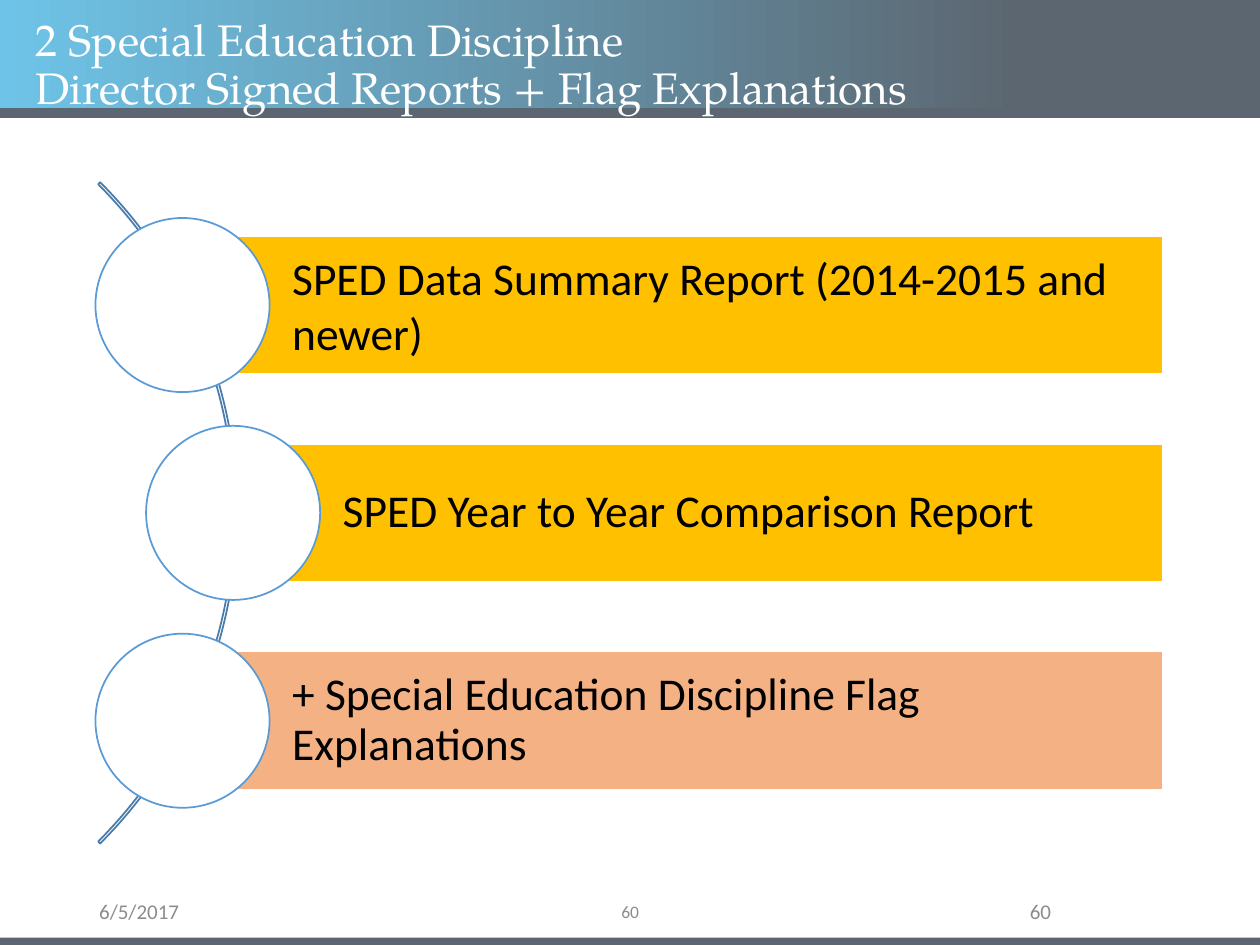
from dataclasses import dataclass

from pptx import Presentation
from pptx.dml.color import RGBColor
from pptx.enum.shapes import MSO_SHAPE
from pptx.enum.text import MSO_ANCHOR, MSO_AUTO_SIZE, PP_ALIGN
from pptx.shapes.autoshape import Shape
from pptx.slide import Slide
from pptx.text.text import TextFrame
from pptx.util import Cm, Pt

SLIDE_W, SLIDE_H = 25.4, 19.05
SLATE, SKY, GOLD, PEACH = "5C6670", "6EC4E8", "FFC000", "F4B183"
WHITE, BLACK, GREY = "FFFFFF", "000000", "8C8C8C"
BAR_RIGHT, BAR_H, CIRCLE_D = 23.44, 2.79, 3.51
FIRST_ROW_Y, ROW_PITCH = 6.15, 4.19
ARC_D, ARC_LEFT = 18.85, -14.07


@dataclass
class Report:
    text: str
    x: float
    fill: str
    spacing: float


@dataclass
class Footer:
    text: str
    left: float
    width: float
    size: float
    align: PP_ALIGN


REPORTS = [
    Report("SPED Data Summary Report (2014-2015 and newer)", 3.68, GOLD, 1.0),
    Report("SPED Year to Year Comparison Report", 4.7, GOLD, 0.9),
    Report("+ Special Education Discipline Flag Explanations", 3.68, PEACH, 0.9),
]
FOOTERS = [
    Footer("6/5/2017", 1.75, 5.72, 12, PP_ALIGN.LEFT),
    Footer("60", 8.41, 8.59, 10, PP_ALIGN.CENTER),
    Footer("60", 17.93, 3.51, 12, PP_ALIGN.RIGHT),
]
TITLE_LINES = ["2 Special Education Discipline ",
               "Director Signed Reports + Flag Explanations"]


def rgb(value: str) -> RGBColor:
    return RGBColor.from_string(value)


def add_shape(s: Slide, kind: MSO_SHAPE, left: float, top: float, width: float,
              height: float, fill: str | None = None, line: str | None = None) -> Shape:
    sp = s.shapes.add_shape(kind, Cm(left), Cm(top), Cm(width), Cm(height))
    sp.shadow.inherit = False
    if fill:
        sp.fill.solid()
        sp.fill.fore_color.rgb = rgb(fill)
    else:
        sp.fill.background()
    if line:
        sp.line.color.rgb = rgb(line)
        sp.line.width = Pt(1)
    else:
        sp.line.fill.background()
    return sp


def write(tf: TextFrame, lines: list[str], font: str, size: float, color: str,
          align: PP_ALIGN = PP_ALIGN.LEFT, spacing: float = 1.0,
          anchor: MSO_ANCHOR = MSO_ANCHOR.MIDDLE) -> None:
    """Fill the frame with one paragraph, breaking between the given lines."""
    tf.word_wrap = True
    tf.auto_size = MSO_AUTO_SIZE.NONE
    tf.vertical_anchor = anchor
    p = tf.paragraphs[0]
    p.alignment = align
    p.line_spacing = spacing
    for i, line in enumerate(lines):
        if i:
            p.add_line_break()
        r = p.add_run()
        r.text = line
        r.font.name = font
        r.font.size = Pt(size)
        r.font.color.rgb = rgb(color)


def add_bands(s: Slide) -> None:
    header = add_shape(s, MSO_SHAPE.RECTANGLE, 0, 0, SLIDE_W, 2.21, SLATE)
    header.fill.gradient()
    header.fill.gradient_angle = 0
    for stop, position, color in zip(header.fill.gradient_stops, (0, 0.81), (SKY, SLATE)):
        stop.position = position
        stop.color.rgb = rgb(color)
    for top, height in ((2.18, 0.2), (18.9, SLIDE_H - 18.9)):
        add_shape(s, MSO_SHAPE.RECTANGLE, 0, top, SLIDE_W, height, SLATE)


def add_title(s: Slide) -> None:
    title = s.shapes.title
    title.left, title.top = Cm(0.46), Cm(0.25)
    title.width, title.height = Cm(21.89), Cm(1.45)
    write(title.text_frame, TITLE_LINES, "TeX Gyre Pagella", 25.2, WHITE,
          spacing=0.9, anchor=MSO_ANCHOR.TOP)
    title.element.getparent().append(title.element)  # in front of the header band


def add_arc(s: Slide) -> None:
    center_y = FIRST_ROW_Y + ROW_PITCH
    arc = add_shape(s, MSO_SHAPE.BLOCK_ARC, ARC_LEFT, center_y - ARC_D / 2,
                    ARC_D, ARC_D, line="497CAB")
    for i, value in enumerate((189, 27, 0.003)):  # 315 degrees, 45 degrees, thickness
        arc.adjustments[i] = value


def add_report(s: Slide, report: Report, y: float) -> None:
    """Draw a bar with a circle centred on its left edge."""
    bar = add_shape(s, MSO_SHAPE.RECTANGLE, report.x, y - BAR_H / 2,
                    BAR_RIGHT - report.x, BAR_H, report.fill, WHITE)
    tf = bar.text_frame
    tf.margin_left = Cm(2.21)
    tf.margin_right = tf.margin_top = tf.margin_bottom = Cm(0.18)
    write(tf, [report.text], "Calibri", 26, BLACK, spacing=report.spacing)
    add_shape(s, MSO_SHAPE.OVAL, report.x - CIRCLE_D / 2, y - CIRCLE_D / 2,
              CIRCLE_D, CIRCLE_D, WHITE, "5B9BD5")


def add_footer(s: Slide, footer: Footer) -> None:
    box = s.shapes.add_textbox(Cm(footer.left), Cm(18.08), Cm(footer.width), Cm(0.58))
    write(box.text_frame, [footer.text], "Calibri", footer.size, GREY, footer.align)


def main() -> None:
    prs = Presentation()
    prs.slide_width, prs.slide_height = Cm(SLIDE_W), Cm(SLIDE_H)
    s = prs.slides.add_slide(prs.slide_layouts.get_by_name("Title Only"))
    add_bands(s)
    add_arc(s)
    for i, report in enumerate(REPORTS):
        add_report(s, report, FIRST_ROW_Y + i * ROW_PITCH)
    for footer in FOOTERS:
        add_footer(s, footer)
    add_title(s)
    prs.save("out.pptx")


if __name__ == "__main__":
    main()
